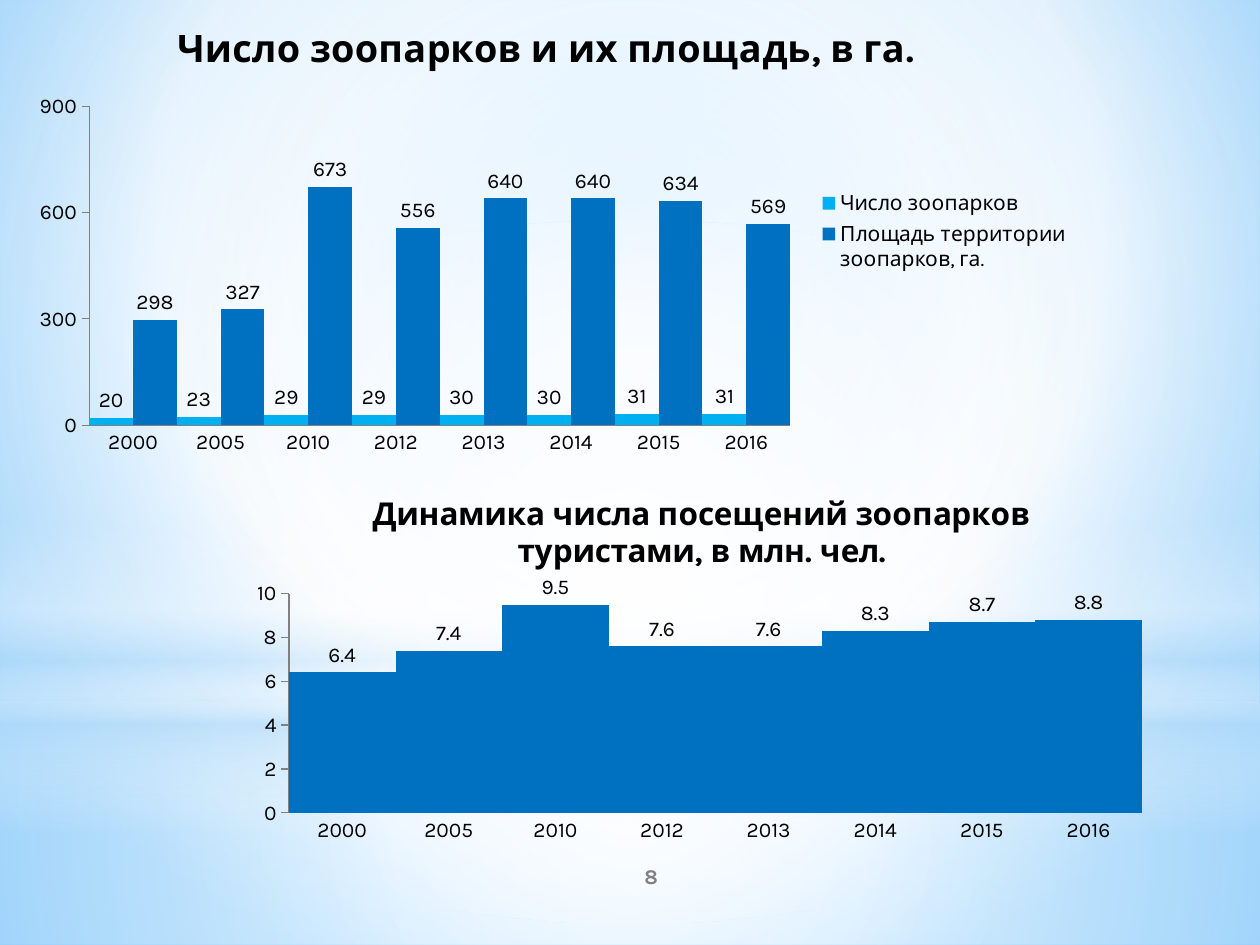
import pptx
import pptx.chart.data
import pptx.dml.color
import pptx.enum.chart
import pptx.enum.shapes
import pptx.enum.text
import pptx.oxml
import pptx.oxml.ns
import pptx.util
from lxml import etree

Cm, Pt = pptx.util.Cm, pptx.util.Pt
qn = pptx.oxml.ns.qn
FONT = "Karla"
COLORS = {
    "text": "000000", "number": "808080", "axis": "808080",
    "count": "00B0F0", "area": "0070C0",
    "white": "FFFFFF", "haze": "B4DCFA", "sky": "9ED5FF", "deep": "5BB9FF",
}
YEARS = ["2000", "2005", "2010", "2012", "2013", "2014", "2015", "2016"]
CENTER = (50, 50, 50, 50)


def rgb(name):
    return pptx.dml.color.RGBColor.from_string(COLORS[name])


def style_font(font, size, color="text", bold=False):
    font.name, font.size, font.bold = FONT, Pt(size), bold
    font.color.rgb = rgb(color)


def set_gradient(fill, element, stops, focus=None):
    """Circular gradient towards focus (l, t, r, b), or a vertical one; stops are (pos, colour, opacity)."""
    fill.gradient()
    grad = element.find(".//" + qn("a:gradFill"))
    for child in list(grad):
        grad.remove(child)
    gs_list = etree.SubElement(grad, qn("a:gsLst"))
    for pos, color, opacity in stops:
        gs = etree.SubElement(gs_list, qn("a:gs"), pos=str(pos * 1000))
        clr = etree.SubElement(gs, qn("a:srgbClr"), val=COLORS[color])
        if opacity < 100:
            etree.SubElement(clr, qn("a:alpha"), val=str(opacity * 1000))
    if focus:
        shade = etree.SubElement(grad, qn("a:path"), path="circle")
        sides = {k: str(v * 1000) for k, v in zip("ltrb", focus)}
        etree.SubElement(shade, qn("a:fillToRect"), **sides)
    else:
        etree.SubElement(grad, qn("a:lin"), ang="5400000", scaled="0")


def add_backdrop(s, width):
    set_gradient(s.background.fill, s.element,
                 [(0, "sky", 100), (60, "white", 100), (100, "deep", 100)], (20, 10, 20, 60))
    kinds = pptx.enum.shapes.MSO_SHAPE
    layers = [
        (kinds.RECTANGLE, 14.17, 4.88, CENTER,
         [(0, "white", 91), (37, "white", 76), (100, "haze", 79)]),
        (kinds.RECTANGLE, 0, 14.17, CENTER,
         [(0, "white", 89), (48, "white", 62), (100, "haze", 79)]),
        (kinds.RECTANGLE, 10.46, 6.35, None,
         [(0, "white", 0), (29, "white", 30), (45, "haze", 40),
          (55, "white", 26), (65, "haze", 60), (100, "white", 0)]),
        (kinds.OVAL, 4.45, 14.17, CENTER, [(0, "white", 100), (56, "white", 0)]),
    ]
    for kind, top, height, focus, stops in layers:
        sp = s.shapes.add_shape(kind, 0, Cm(top), width, Cm(height))
        sp.shadow.inherit = False
        sp.line.fill.background()
        set_gradient(sp.fill, sp.element, stops, focus)


def set_layout(element, index, box, inner=False):
    """Fix a plot area or legend at box (x, y, w, h), in fractions of the chart."""
    for old in element.findall(qn("c:layout")):
        element.remove(old)
    layout = etree.Element(qn("c:layout"))
    manual = etree.SubElement(layout, qn("c:manualLayout"))
    if inner:
        etree.SubElement(manual, qn("c:layoutTarget"), val="inner")
    for tag in ("xMode", "yMode"):
        etree.SubElement(manual, qn("c:" + tag), val="edge")
    for tag, value in zip("xywh", box):
        etree.SubElement(manual, qn("c:" + tag), val=str(value))
    element.insert(index, layout)


def style_axis(axis, tick):
    axis.has_major_gridlines = False
    axis.major_tick_mark = tick
    axis.minor_tick_mark = pptx.enum.chart.XL_TICK_MARK.NONE
    axis.format.line.color.rgb = rgb("axis")
    axis.format.line.width = Pt(0.75)
    style_font(axis.tick_labels.font, 12)


def add_columns(s, box, title, title_size, series, plot_box, top, step, legend_box=None):
    """Column chart without gaps; series are (name, colour, values)."""
    enums = pptx.enum.chart
    data = pptx.chart.data.CategoryChartData()
    data.categories = YEARS
    for name, _, values in series:
        data.add_series(name, values)
    chart = s.shapes.add_chart(enums.XL_CHART_TYPE.COLUMN_CLUSTERED,
                               *map(Cm, box), data).chart
    style_font(chart.font, 12)
    chart.has_title = True
    r = chart.chart_title.text_frame.paragraphs[0].add_run()
    r.text = title
    style_font(r.font, title_size, bold=True)
    chart.chart_title.include_in_layout = False

    style_axis(chart.category_axis, enums.XL_TICK_MARK.NONE)
    style_axis(chart.value_axis, enums.XL_TICK_MARK.OUTSIDE)
    chart.value_axis.minimum_scale, chart.value_axis.maximum_scale = 0, top
    chart.value_axis.major_unit = step

    plot = chart.plots[0]
    plot.gap_width, plot.overlap = 0, 0
    plot.vary_by_categories = False
    for ser, (_, color, _) in zip(plot.series, series):
        ser.format.fill.solid()
        ser.format.fill.fore_color.rgb = rgb(color)
        labels = ser.data_labels
        labels.show_value = True
        labels.position = enums.XL_LABEL_POSITION.OUTSIDE_END
        style_font(labels.font, 12)
    set_layout(chart.element.find(".//" + qn("c:plotArea")), 0, plot_box, inner=True)

    chart.has_legend = legend_box is not None
    if legend_box:
        chart.legend.position = enums.XL_LEGEND_POSITION.RIGHT
        chart.legend.include_in_layout = False
        style_font(chart.legend.font, 12)
        set_layout(chart.element.find(".//" + qn("c:legend")), 1, legend_box)


def add_page_number(s, box, number):
    tf = s.shapes.add_textbox(*map(Cm, box)).text_frame
    tf.word_wrap = True
    tf.vertical_anchor = pptx.enum.text.MSO_ANCHOR.MIDDLE
    p = tf.paragraphs[0]
    p.alignment = pptx.enum.text.PP_ALIGN.CENTER
    r = p.add_run()
    r.text = number
    style_font(r.font, 12, "number", bold=True)


def main():
    prs = pptx.Presentation()
    prs.slide_width, prs.slide_height = Cm(25.4), Cm(19.05)
    s = prs.slides.add_slide(prs.slide_layouts[6])
    add_backdrop(s, prs.slide_width)
    add_page_number(s, (10.59, 17.15, 5.08, 1.02), "8")
    add_columns(
        s, (0.3, 0, 21.41, 9.32), "Число зоопарков и их площадь, в га.", 21.6,
        [("Число зоопарков", "count", [20, 23, 29, 29, 30, 30, 31, 31]),
         ("Площадь территории зоопарков, га.", "area",
          [298, 327, 673, 556, 640, 640, 634, 569])],
        (0.07, 0.23, 0.66, 0.69), 900, 300, (0.75, 0.4, 0.25, 0.2))
    add_columns(
        s, (4.9, 9.53, 18.49, 7.62),
        "Динамика числа посещений зоопарков туристами, в млн. чел.", 18,
        [("Series 1", "area", [6.4, 7.4, 9.5, 7.6, 7.6, 8.3, 8.7, 8.8])],
        (0.05, 0.32, 0.93, 0.58), 10, 2)
    prs.save("out.pptx")


if __name__ == "__main__":
    main()
